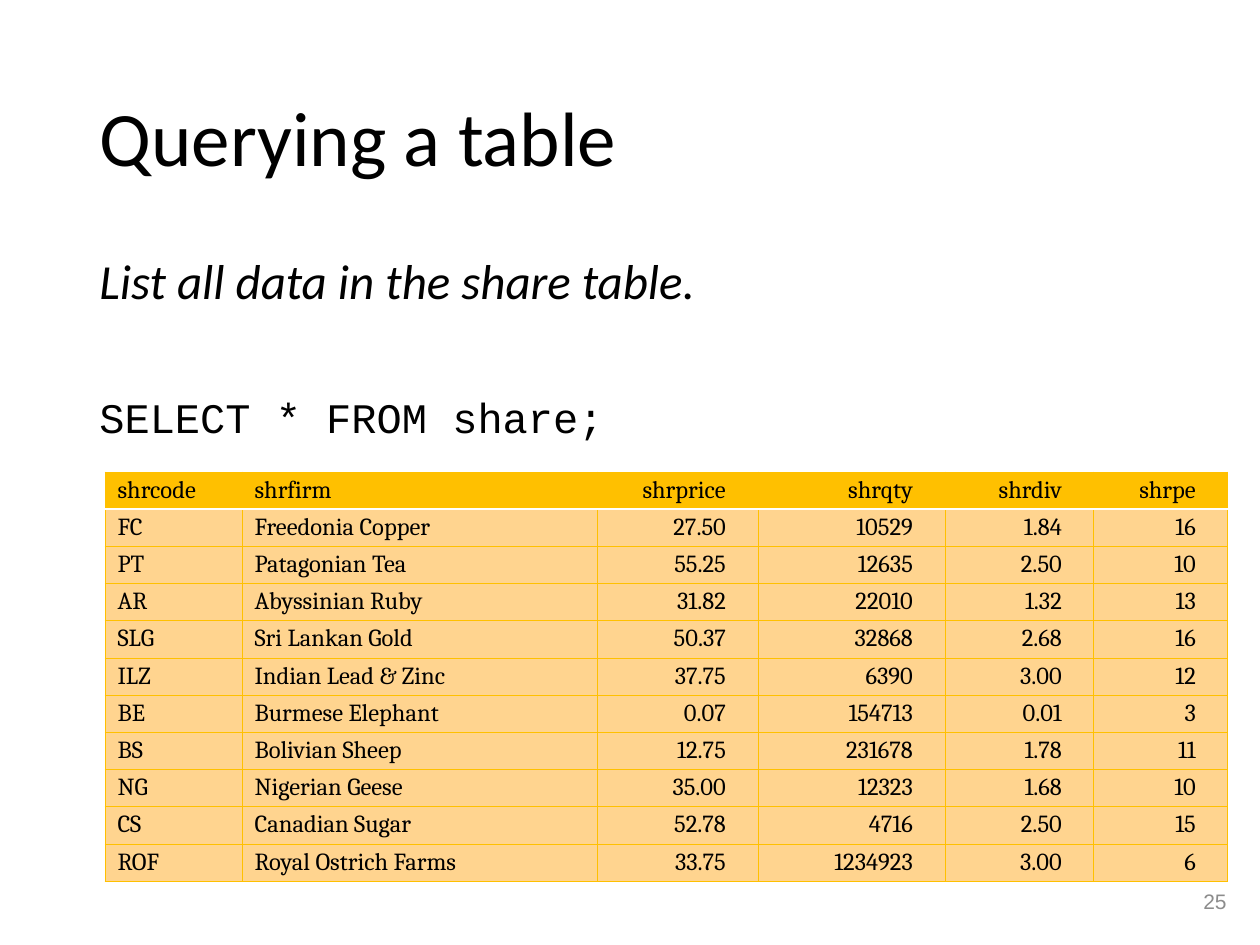
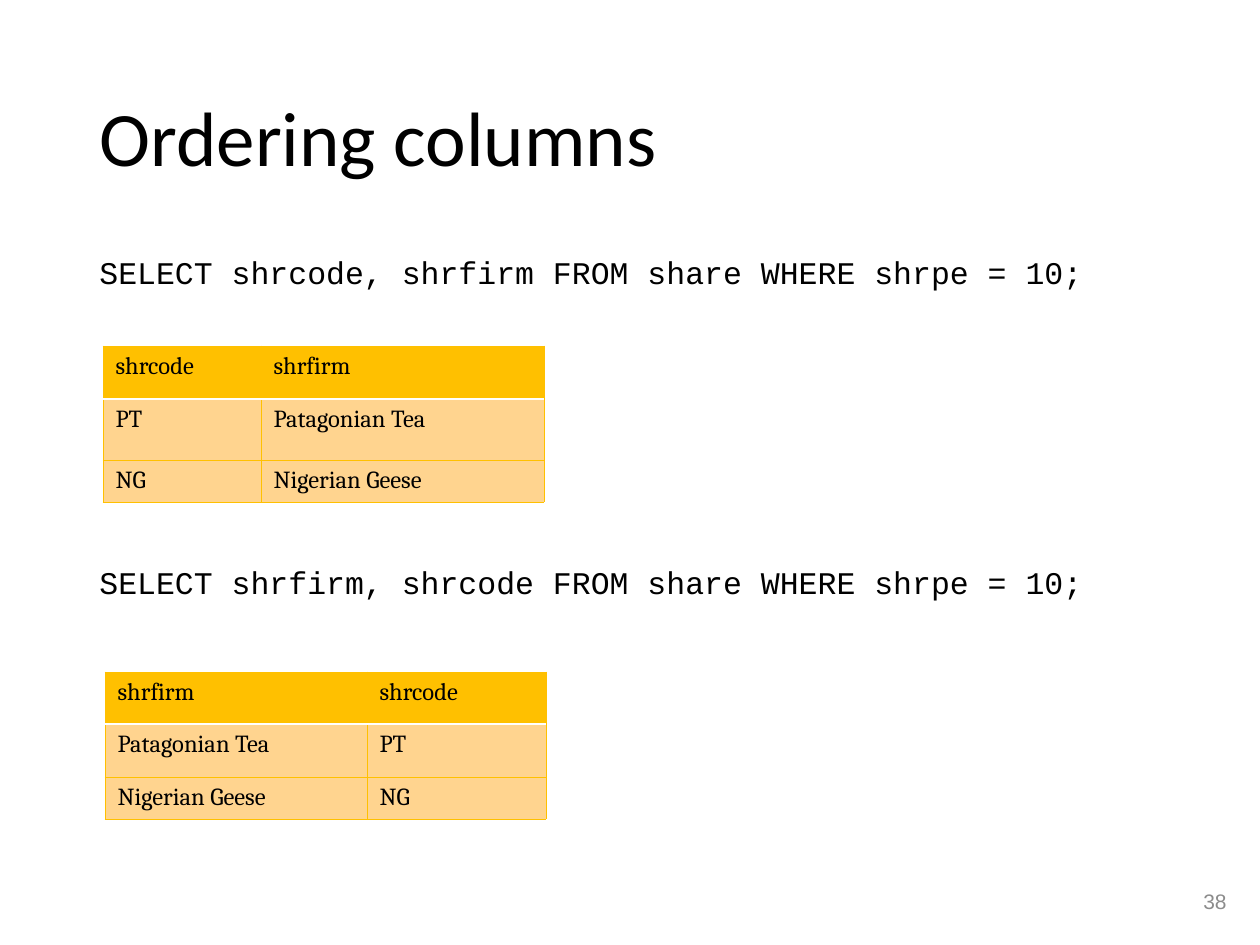
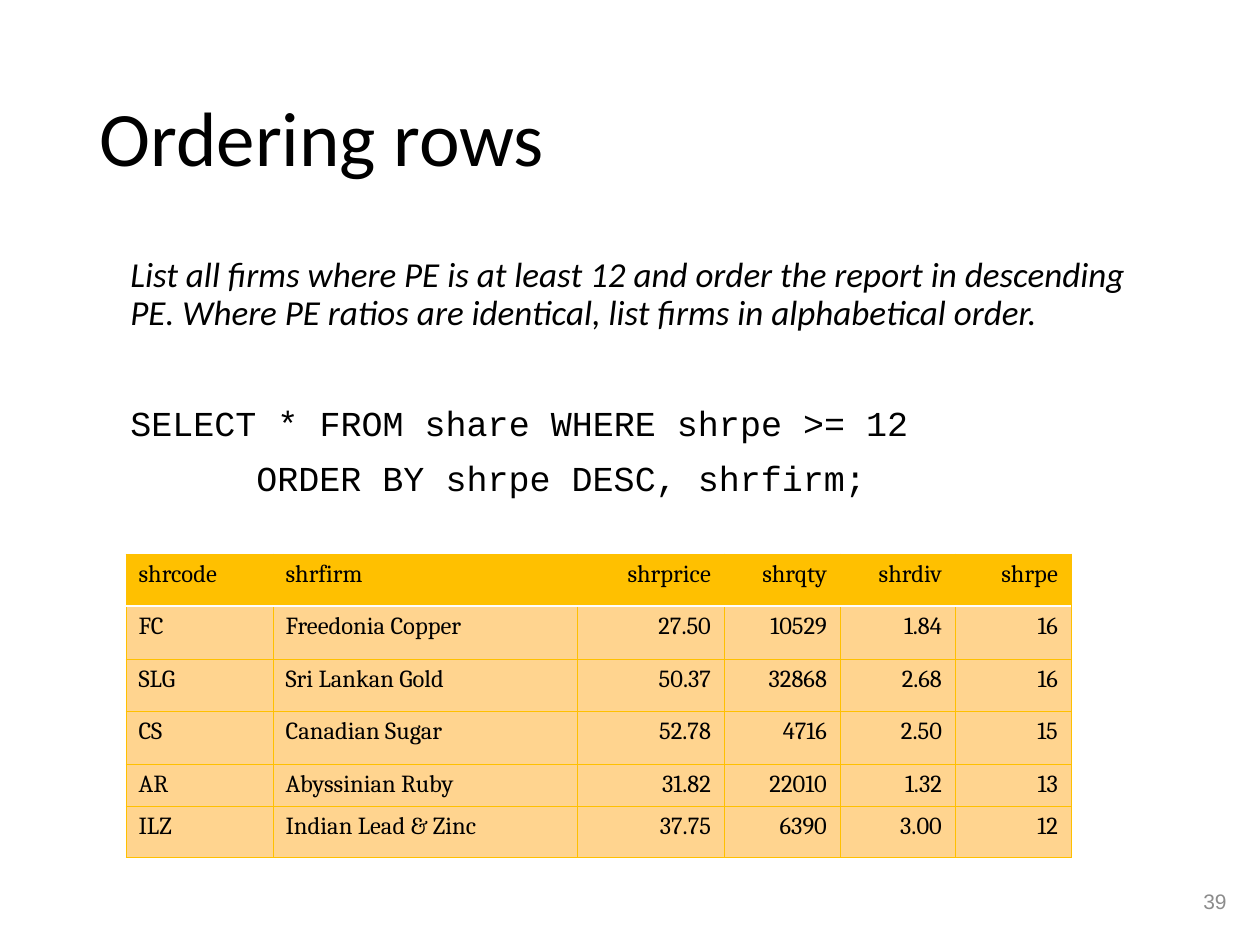
import pptx
import pptx.dml.color
import pptx.enum.text
import pptx.oxml
import pptx.oxml.ns
import pptx.util

PX = 914400 / 126
BLACK, GREY, WHITE = "000000", "8C8C8C", "FFFFFF"
GOLD, PALE_GOLD = "FFC000", "FFD48F"
ALIGN = pptx.enum.text.PP_ALIGN
ANCHOR = pptx.enum.text.MSO_ANCHOR


def px(*lengths):
    return [pptx.util.Emu(round(length * PX)) for length in lengths]


def style(para, font, size, color=BLACK, italic=False):
    para.font.name, para.font.size = font, pptx.util.Pt(size)
    para.font.bold, para.font.italic = False, italic
    para.font.color.rgb = pptx.dml.color.RGBColor.from_string(color)


# The share table and the queries on it
FIELDS = ["shrcode", "shrfirm", "shrprice", "shrqty", "shrdiv", "shrpe"]
TEXT_FIELDS = FIELDS[:2]
SHARES = [dict(zip(FIELDS, row)) for row in [
    ("FC", "Freedonia Copper", "27.50", "10529", "1.84", "16"),
    ("PT", "Patagonian Tea", "55.25", "12635", "2.50", "10"),
    ("AR", "Abyssinian Ruby", "31.82", "22010", "1.32", "13"),
    ("SLG", "Sri Lankan Gold", "50.37", "32868", "2.68", "16"),
    ("ILZ", "Indian Lead & Zinc", "37.75", "6390", "3.00", "12"),
    ("BE", "Burmese Elephant", "0.07", "154713", "0.01", "3"),
    ("BS", "Bolivian Sheep", "12.75", "231678", "1.78", "11"),
    ("NG", "Nigerian Geese", "35.00", "12323", "1.68", "10"),
    ("CS", "Canadian Sugar", "52.78", "4716", "2.50", "15"),
    ("ROF", "Royal Ostrich Farms", "33.75", "1234923", "3.00", "6"),
]]
PE_10 = [share for share in SHARES if share["shrpe"] == "10"]
PE_FROM_12 = sorted((share for share in SHARES if int(share["shrpe"]) >= 12),
                    key=lambda share: (-int(share["shrpe"]), share["shrfirm"]))

# Lines: text, font, size, italic, space before in points, indent in px
# Tables: left, top, fields, column widths, row heights, shares,
#         number margins (left, right), line spacing
PAGES = [
    ("Querying a table", "25", [
        ("List all data in the share table.", "Calibri", 28, True, 10, 0),
        ("SELECT * FROM share;", "Courier New", 24, False, 50, 0),
    ], [
        (105, 472, FIELDS, [137, 355, 161, 187, 149, 134], [37] * 11,
         SHARES, (0, 32), 0.88),
    ]),
    ("Ordering columns", "38", [
        ("SELECT shrcode, shrfirm FROM share WHERE shrpe = 10;",
         "Courier New", 18, False, 10, 0),
        ("SELECT shrfirm, shrcode FROM share WHERE shrpe = 10;",
         "Courier New", 18, False, 158, 0),
    ], [
        (103, 346, TEXT_FIELDS, [158, 283], [53, 61, 42], PE_10, (13, 13), 1.0),
        (105, 672, TEXT_FIELDS[::-1], [262, 179], [52, 53, 42], PE_10, (13, 13), 1.0),
    ]),
    ("Ordering rows", "39", [
        ("List all firms where PE is at least 12 and order the report in descending PE. "
         "Where PE ratios are identical, list firms in alphabetical order.",
         "Calibri", 20, True, 10, 31),
        ("SELECT * FROM share WHERE shrpe >= 12", "Courier New", 20, False, 42, 31),
        ("ORDER BY shrpe DESC, shrfirm;", "Courier New", 20, False, 10, 157),
    ], [
        (126, 554, FIELDS, [147, 304, 147, 116, 115, 116],
         [52, 53, 52, 53, 42, 52], PE_FROM_12, (13, 13), 1.0),
    ]),
]

deck = pptx.Presentation()
deck.slide_width, deck.slide_height = px(1260, 945)

for title, number, lines, tables in PAGES:
    page = deck.slides.add_slide(deck.slide_layouts[5])

    # Title
    heading = page.shapes.title
    heading.left, heading.top, heading.width, heading.height = px(87, 50, 1086, 183)
    heading.text_frame.text = title
    heading.text_frame.vertical_anchor = ANCHOR.MIDDLE
    para = heading.text_frame.paragraphs[0]
    para.alignment, para.line_spacing = ALIGN.LEFT, 0.9
    style(para, "Calibri", 44)

    # Task and query
    frame = page.shapes.add_textbox(*px(87, 251, 1086, 600)).text_frame
    frame.word_wrap = True
    for index, (text, font, size, italic, space, indent) in enumerate(lines):
        para = frame.add_paragraph() if index else frame.paragraphs[0]
        para.text = text
        para.line_spacing, para.space_before = 0.9, pptx.util.Pt(space)
        para._p.get_or_add_pPr().set("marL", str(px(indent)[0]))
        style(para, font, size, italic=italic)

    # Page number
    frame = page.shapes.add_textbox(*px(955, 876, 284, 50)).text_frame
    frame.word_wrap, frame.vertical_anchor = True, ANCHOR.MIDDLE
    frame.text = number
    frame.paragraphs[0].alignment = ALIGN.RIGHT
    style(frame.paragraphs[0], "Arial", 12, GREY)

    # Query results
    for left, top, fields, widths, heights, shares, margins, spacing in tables:
        grid = page.shapes.add_table(
            len(heights), len(widths), *px(left, top, sum(widths), sum(heights))).table
        grid.horz_banding = False
        for column, width in zip(grid.columns, px(*widths)):
            column.width = width
        for row, height in zip(grid.rows, px(*heights)):
            row.height = height

        records = [dict(zip(fields, fields))] + shares
        for row_index, record in enumerate(records):
            for column_index, field in enumerate(fields):
                cell = grid.cell(row_index, column_index)
                cell.text = record[field]
                # A slim bottom margin keeps the tallest table above the page number
                cell.margin_bottom = px(5)[0]
                para = cell.text_frame.paragraphs[0]
                para.line_spacing = spacing
                style(para, "Cambria", 14)
                if field not in TEXT_FIELDS:
                    para.alignment = ALIGN.RIGHT
                    cell.margin_left, cell.margin_right = px(*margins)

                # White rule under the header, gold lines elsewhere
                white_edge = {0: "lnB", 1: "lnT"}.get(row_index)
                for edge in ("lnL", "lnR", "lnT", "lnB"):
                    color, width = (WHITE, 12700) if edge == white_edge else (GOLD, 6350)
                    cell._tc.get_or_add_tcPr().append(pptx.oxml.parse_xml(
                        f'<a:{edge} {pptx.oxml.ns.nsdecls("a")} w="{width}"><a:solidFill>'
                        f'<a:srgbClr val="{color}"/></a:solidFill></a:{edge}>'))
                cell.fill.solid()
                cell.fill.fore_color.rgb = pptx.dml.color.RGBColor.from_string(
                    PALE_GOLD if row_index else GOLD)

deck.save("out.pptx")
